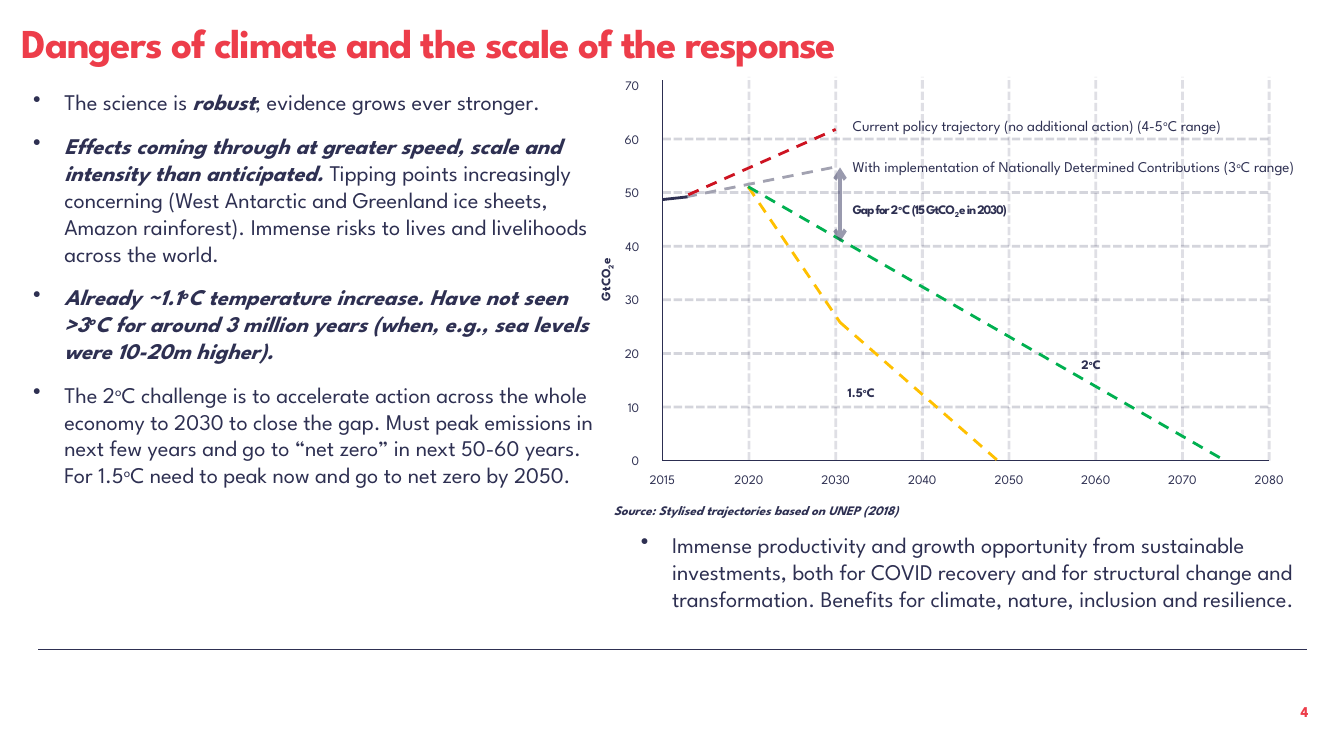
from lxml.etree import SubElement
from pptx import Presentation
from pptx.dml.color import RGBColor
from pptx.enum.dml import MSO_LINE
from pptx.enum.shapes import MSO_CONNECTOR
from pptx.enum.text import MSO_ANCHOR as Anchor, PP_ALIGN as Align
from pptx.oxml.ns import qn
from pptx.util import Inches, Pt

NAVY = RGBColor(0x2E, 0x30, 0x52)
AXIS = RGBColor(0x2C, 0x2E, 0x51)
ARROW = RGBColor(0x35, 0x37, 0x5E)
CORAL = RGBColor(0xED, 0x3D, 0x4A)
GREY = RGBColor(0xA2, 0xA2, 0xB1)
RED = RGBColor(0xCD, 0x13, 0x21)
YELLOW = RGBColor(0xFF, 0xC0, 0x00)
GREEN = RGBColor(0x00, 0xB0, 0x50)
FONT = "League Spartan"
WIDTH, HEIGHT = Inches(13.33), Inches(7.5)
SMALL, LABEL, BODY = 9.3, 10.7, 16
YEARS = [2015] + list(range(2020, 2081, 10))

# In texts, * toggles bold italic, ^ superscript and _ subscript
SCIENCE = [
    "The science is *robust*; evidence grows ever stronger.",
    "*Effects coming through at greater speed, scale and intensity than "
    "anticipated. *Tipping points increasingly concerning (West Antarctic and "
    "Greenland ice sheets, Amazon rainforest). Immense risks to lives and "
    "livelihoods across the world.",
    "*Already ~1.1^o^C temperature increase. Have not seen >3^o^C for around "
    "3 million years (when, e.g., sea levels were 10-20m higher).*",
    "The 2^o^C challenge is to accelerate action across the whole economy to "
    "2030 to close the gap. Must peak emissions in next few years and go to "
    "“net zero” in next 50-60 years. For 1.5^o^C need to peak now and go to "
    "net zero by 2050.",
]
BENEFITS = [
    "Immense productivity and growth opportunity from sustainable "
    "investments, both for COVID recovery and for structural change and "
    "transformation. Benefits for climate, nature, inclusion and resilience.",
]

# Colour, dash and (column, GtCO2e) points of each trajectory
TRAJECTORIES = [
    (GREY, MSO_LINE.DASH, [(0.27, 49.2), (1.97, 54.7)]),
    (NAVY, None, [(0, 48.7), (0.29, 49.2)]),
    (RED, MSO_LINE.DASH, [(0.3, 49.6), (2, 61.8)]),
    (YELLOW, MSO_LINE.DASH, [(0.99, 51.1), (2.05, 25.8), (3.87, 0)]),
    (GREEN, MSO_LINE.DASH, [(0.99, 51.1), (6.49, 0)]),
]


def across(share):
    """Length from a percentage of the slide's width."""
    return round(WIDTH * share / 100)


def down(share):
    """Length from a percentage of the slide's height."""
    return round(HEIGHT * share / 100)


def plot(column, value):
    """Percentages of the slide for a point on the chart's grid."""
    return 49.28 + 6.45 * column, 60.93 - 0.709 * value


def add_spans(para, text, size, color, bold, italic, spacing):
    strong, baseline, piece = False, 0, ""
    for mark in text + "\n":
        if mark not in "*^_\n":
            piece += mark
            continue
        if piece:
            span = para.add_run()
            span.text = piece
            font = span.font
            font.name, font.size, font.color.rgb = FONT, Pt(size), color
            font.bold, font.italic = bold or strong, italic or strong
            if baseline:
                span._r.get_or_add_rPr().set("baseline", str(baseline))
            if spacing:
                span._r.get_or_add_rPr().set("spc", str(spacing))
            piece = ""
        if mark == "*":
            strong = not strong
        elif mark != "\n":
            baseline = 0 if baseline else {"^": 30000, "_": -25000}[mark]


def add_text(page, texts, left, top, width, height, size=SMALL, color=NAVY,
             bold=False, italic=False, spacing=0, align=Align.LEFT,
             anchor=Anchor.MIDDLE, bullets=False, inset=True, vertical=False):
    box = page.shapes.add_textbox(across(left), down(top),
                                  across(width), down(height))
    frame = box.text_frame
    frame.word_wrap, frame.vertical_anchor = True, anchor
    if not inset:
        frame.margin_left = frame.margin_right = 0
        frame.margin_top = frame.margin_bottom = 0
    if vertical:
        frame._txBody.bodyPr.set("vert", "vert270")
    for number, text in enumerate(texts):
        para = frame.add_paragraph() if number else frame.paragraphs[0]
        para.alignment = align
        if bullets:
            properties = para._p.get_or_add_pPr()
            properties.set("marL", str(Inches(0.31)))
            properties.set("indent", str(Inches(-0.31)))
            SubElement(properties, qn("a:buChar"), char="•")
            para.space_after = Pt(12)
        add_spans(para, text, size, color, bold, italic, spacing)


def add_line(page, start, end, color, width, dash=None, opacity=100,
             arrows=False):
    line = page.shapes.add_connector(
        MSO_CONNECTOR.STRAIGHT, across(start[0]), down(start[1]),
        across(end[0]), down(end[1]))
    line.line.color.rgb, line.line.width = color, Pt(width)
    if dash:
        line.line.dash_style = dash
    outline = line.line._ln
    if opacity < 100:
        SubElement(outline.find(".//" + qn("a:srgbClr")), qn("a:alpha"),
                   val=str(opacity * 1000))
    if arrows:
        for tip in ("a:headEnd", "a:tailEnd"):
            SubElement(outline, qn(tip), type="arrow")
    SubElement(line._element.spPr, qn("a:effectLst"))


def add_grid(page):
    last = len(YEARS) - 1
    # Gridlines and axis labels
    for column, year in enumerate(YEARS):
        if column:
            add_line(page, plot(column, 0), plot(column, 71.6), AXIS, 0,
                     MSO_LINE.SQUARE_DOT, opacity=15)
        add_text(page, [str(year)], plot(column, 0)[0] - 1.95, 62, 3.9, 2.93,
                 align=Align.CENTER)
    for value in range(0, 71, 10):
        if 0 < value < 70:
            add_line(page, plot(0, value), plot(last, value), AXIS, 0,
                     MSO_LINE.SQUARE_DOT, opacity=20)
        add_text(page, [str(value)], 44.55, plot(0, value)[1] - 1.27, 3.75,
                 2.53, align=Align.RIGHT)
    # Axes
    add_line(page, plot(0, 71), plot(0, 0), AXIS, 0.75)
    add_line(page, plot(0, 0), plot(last, 0), AXIS, 0.75)
    add_text(page, ["GtCO_2_e"], 44.4, 20.27, 1.43, 33.47, bold=True,
             align=Align.CENTER, vertical=True)


def add_trajectories(page):
    for color, dash, points in TRAJECTORIES:
        for start, end in zip(points, points[1:]):
            add_line(page, plot(*start), plot(*end), color, 2, dash)
    add_line(page, plot(2.05, 54.7), plot(2.05, 40.8), ARROW, 2.75,
             opacity=49, arrows=True)
    # Labels beside the lines
    add_text(page, ["Current policy trajectory (no additional action) "
                    "(4-5^o^C range)"], 62.7, 14.67, 36, 3.73, size=LABEL)
    add_text(page, ["With implementation of Nationally Determined "
                    "Contributions (3^o^C range)"], 62.7, 20.67, 36.08, 2.8,
             size=LABEL)
    add_text(page, ["Gap for 2^o^C (15 GtCO_2_e in 2030)"], 62.7, 26.13,
             20.78, 3.33, bold=True, spacing=-80)
    add_text(page, ["2^o^C"], 77.85, 46.67, 6.68, 2.93, bold=True,
             align=Align.CENTER)
    add_text(page, ["1.5^o^C"], 60.6, 50.4, 6.98, 2.93, bold=True,
             align=Align.CENTER)


def main():
    deck = Presentation()
    deck.slide_width, deck.slide_height = WIDTH, HEIGHT
    page = deck.slides.add_slide(deck.slide_layouts[6])

    # Title and text
    add_text(page, ["Dangers of climate and the scale of the response"],
             0.9, 1.6, 90, 7.2, size=29.3, color=CORAL, bold=True,
             spacing=-80, anchor=Anchor.TOP)
    add_text(page, SCIENCE, 1.73, 11.07, 44.03, 65.47, size=BODY,
             anchor=Anchor.TOP, bullets=True)
    add_text(page, BENEFITS, 46.95, 69.6, 51.38, 15.73, size=BODY,
             anchor=Anchor.TOP, bullets=True)

    # Emissions chart
    add_grid(page)
    add_trajectories(page)
    add_text(page, ["Source: Stylised trajectories based on UNEP (2018)"],
             44.93, 66.13, 40.88, 2.67, bold=True, italic=True)

    # Footer
    add_line(page, (2.85, 85.87), (97.28, 85.87), NAVY, 0.5)
    add_text(page, ["4"], 90.9, 91.6, 6.45, 3.73, size=LABEL, color=CORAL,
             bold=True, align=Align.RIGHT, anchor=Anchor.BOTTOM, inset=False)
    deck.save("out.pptx")


if __name__ == "__main__":
    main()
